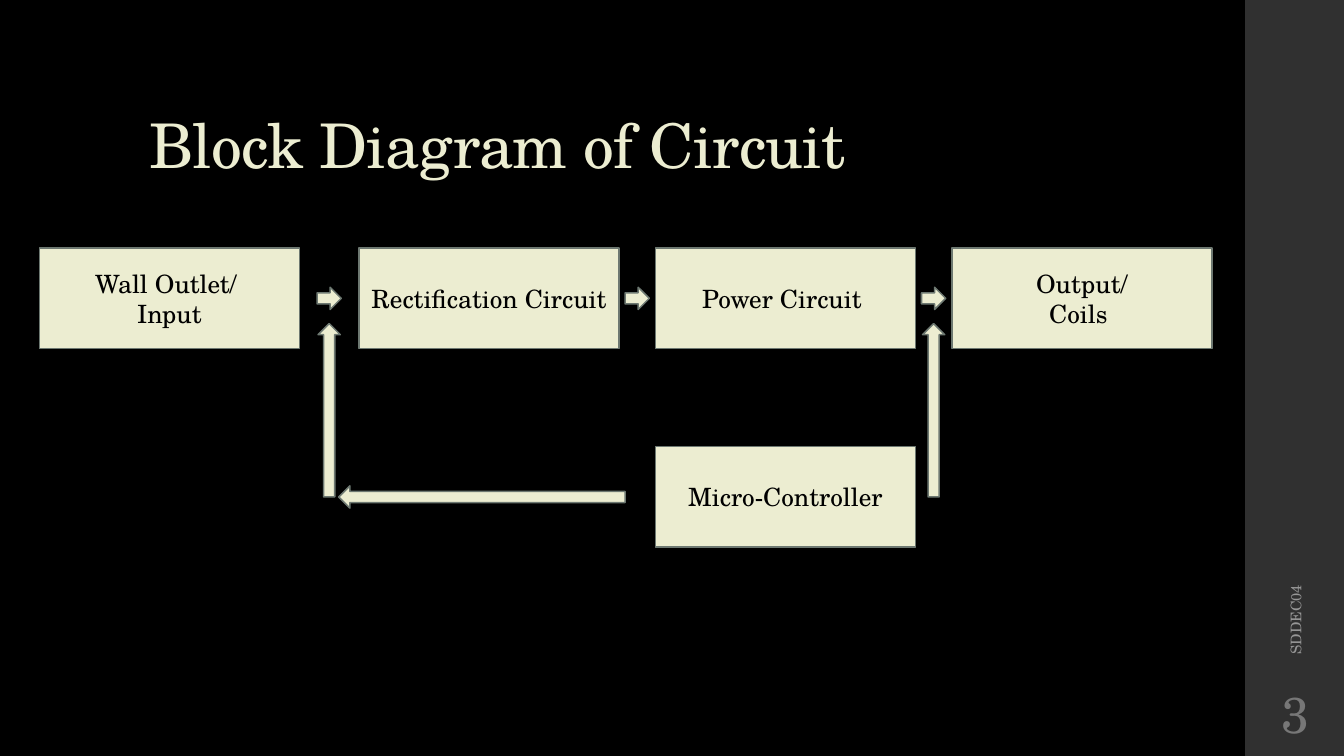
from pptx import Presentation
from pptx.dml.color import RGBColor
from pptx.enum.shapes import MSO_SHAPE
from pptx.enum.text import MSO_ANCHOR, PP_ALIGN
from pptx.util import Inches, Pt

COLORS = {"background": "000000", "side band": "303030", "cream": "ECEDD1",
          "outline": "6D7871", "label": "000000", "footer": "969696", "number": "777777"}
FONT = "TeX Gyre Schola"
WIDTH, HEIGHT = 13.33, 7.5
BAND_LEFT, BAND_WIDTH = 12.35, 1

# Block grid: the input stands apart, the other columns share one pitch
BLOCK_WIDTH, BLOCK_HEIGHT = 2.58, 1
COLUMNS = [0.39] + [3.56 + 2.94 * step for step in range(3)]
ROWS = [2.46, 4.43]
GAP_CENTERS = [(left + BLOCK_WIDTH + following) / 2
               for left, following in zip(COLUMNS, COLUMNS[1:])]
ROW_CENTERS = [top + BLOCK_HEIGHT / 2 for top in ROWS]
ARROW_WIDTH = 0.22


def add_panel(kind, left, top, width, height, fill, outline=None):
    panel = page.shapes.add_shape(kind, Inches(left), Inches(top), Inches(width), Inches(height))
    panel.shadow.inherit = False
    panel.fill.solid()
    panel.fill.fore_color.rgb = RGBColor.from_string(COLORS[fill])
    if outline:
        panel.line.color.rgb = RGBColor.from_string(COLORS[outline])
        panel.line.width = Pt(1.1)
    else:
        panel.line.fill.background()
    return panel


def write(shape, lines, size, color, anchor=MSO_ANCHOR.MIDDLE, **paragraph_format):
    """Fill a shape with one paragraph per line and return its text frame."""
    frame = shape.text_frame
    frame.word_wrap = True
    frame.vertical_anchor = anchor
    for index, line in enumerate(lines):
        para = frame.add_paragraph() if index else frame.paragraphs[0]
        for name, value in paragraph_format.items():
            setattr(para, name, value)
        span = para.add_run()
        span.text = line
        span.font.name = FONT
        span.font.size = Pt(size)
        span.font.color.rgb = RGBColor.from_string(COLORS[color])
    return frame


deck = Presentation()
deck.slide_width, deck.slide_height = Inches(WIDTH), Inches(HEIGHT)
page = deck.slides.add_slide(deck.slide_layouts[6])
page.background.fill.solid()
page.background.fill.fore_color.rgb = RGBColor.from_string(COLORS["background"])

add_panel(MSO_SHAPE.RECTANGLE, BAND_LEFT, 0, BAND_WIDTH, HEIGHT, "side band")

title = page.shapes.add_textbox(Inches(1.38), Inches(0.4), Inches(10.6), Inches(1.45))
title_frame = write(title, ["Block Diagram of Circuit"], 44, "cream", MSO_ANCHOR.BOTTOM,
                    line_spacing=0.9)
title_frame.paragraphs[0].runs[0].font._element.set("spc", "-50")

# Blocks: column, row, lines of the label
blocks = [
    (0, 0, ["Wall Outlet/ ", "Input"]),
    (1, 0, ["Rectification Circuit"]),
    (2, 0, ["Power Circuit "]),
    (3, 0, ["Output/", "Coils "]),
    (2, 1, ["Micro-Controller"]),
]
for column, row, label in blocks:
    block = add_panel(MSO_SHAPE.RECTANGLE, COLUMNS[column], ROWS[row],
                      BLOCK_WIDTH, BLOCK_HEIGHT, "cream", "outline")
    write(block, label, 18, "label", alignment=PP_ALIGN.CENTER)

# Arrows: centre x, centre y, length, rotation
RISE = 1.72
FEEDBACK_START, FEEDBACK_END = 6.2, 3.36
arrows = [(center, ROW_CENTERS[0], 0.24, 0) for center in GAP_CENTERS]
arrows += [(center, ROW_CENTERS[1] - RISE / 2, RISE, 270)
           for center in (GAP_CENTERS[0], GAP_CENTERS[-1])]
arrows.append(((FEEDBACK_START + FEEDBACK_END) / 2, ROW_CENTERS[1],
               FEEDBACK_START - FEEDBACK_END, 180))
for center_x, center_y, length, rotation in arrows:
    arrow = add_panel(MSO_SHAPE.RIGHT_ARROW, center_x - length / 2, center_y - ARROW_WIDTH / 2,
                      length, ARROW_WIDTH, "cream", "outline")
    arrow.rotation = rotation

footer = page.shapes.add_textbox(Inches(10.89), Inches(4.43), Inches(3.92), Inches(0.4))
footer.rotation = 270
write(footer, ["SDDEC04"], 10.5, "footer")

number = page.shapes.add_textbox(Inches(BAND_LEFT), Inches(6.75), Inches(BAND_WIDTH), Inches(0.65))
number_frame = write(number, ["3"], 36, "number", alignment=PP_ALIGN.CENTER)
for side in ("left", "top", "right", "bottom"):
    setattr(number_frame, f"margin_{side}", Inches(0.05))

deck.save("out.pptx")
